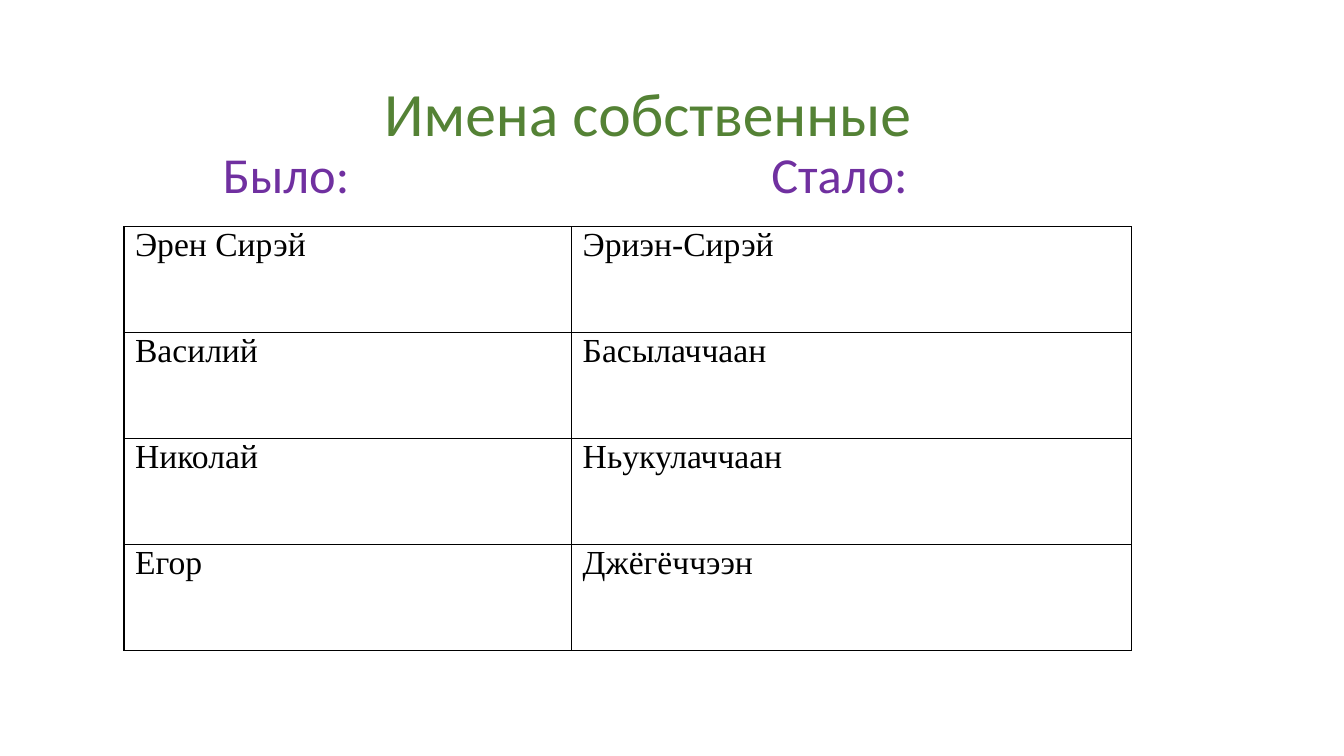
"""Builds a slide with a table of proper names before and after adaptation."""
from lxml.etree import SubElement
from pptx import Presentation
from pptx.dml.color import RGBColor
from pptx.enum.text import MSO_ANCHOR, MSO_AUTO_SIZE, PP_ALIGN
from pptx.oxml.ns import qn
from pptx.util import Inches, Pt

COLORS = {"heading": "548235", "label": "7030A0", "ink": "000000"}
TITLE_LINES = [
    {"text": "\tИмена собственные", "tabs": [2.62], "size": 44, "color": "heading"},
    {"text": "\tБыло:\tСтало:", "tabs": [1.02, 6.46], "size": 36, "color": "label"},
]
NAMES = [
    ("Эрен Сирэй", "Эриэн-Сирэй"),
    ("Василий", "Басылаччаан"),
    ("Николай", "Ньукулаччаан"),
    ("Егор", "Джёгёччээн"),
]
COL_WIDTHS = [4.44, 5.55]
ROW_HEIGHT = 1.05
CELL_FORMAT = {"margin_left": Inches(0.07), "margin_right": Inches(0.07),
               "margin_top": 0, "margin_bottom": 0}
TITLE_FORMAT = {"left": Inches(1.09), "top": Inches(0.7),
                "width": Inches(11.5), "height": Inches(1.45)}
FRAME_FORMAT = {"word_wrap": True, "auto_size": MSO_AUTO_SIZE.NONE,
                "vertical_anchor": MSO_ANCHOR.MIDDLE}


def set_attrs(obj, values):
    for name, value in values.items():
        setattr(obj, name, value)


def add_text(p, text, font, size, color):
    r = p.add_run()
    r.text = text
    set_attrs(r.font, {"name": font, "size": Pt(size)})
    r.font.color.rgb = RGBColor.from_string(COLORS[color])


def add_tabs(p, stops):
    tabs = SubElement(p._p.get_or_add_pPr(), qn("a:tabLst"))
    for stop in stops:
        SubElement(tabs, qn("a:tab"), pos=str(Inches(stop)), algn="l")


def add_borders(cell):
    tcPr = cell._tc.get_or_add_tcPr()
    for side in ("lnL", "lnR", "lnT", "lnB"):
        ln = SubElement(tcPr, qn(f"a:{side}"), w=str(Pt(1)))
        fill = SubElement(ln, qn("a:solidFill"))
        SubElement(fill, qn("a:srgbClr"), val=COLORS["ink"])


def build_title(s):
    title = s.shapes.title
    set_attrs(title, TITLE_FORMAT)
    tf = title.text_frame
    set_attrs(tf, FRAME_FORMAT)
    for i, line in enumerate(TITLE_LINES):
        p = tf.add_paragraph() if i else tf.paragraphs[0]
        add_tabs(p, line["tabs"])
        set_attrs(p, {"alignment": PP_ALIGN.LEFT, "line_spacing": 0.9})
        add_text(p, line["text"], "Calibri", line["size"], line["color"])


def build_table(s):
    table = s.shapes.add_table(
        len(NAMES), len(COL_WIDTHS), Inches(1.23), Inches(2.25),
        Inches(sum(COL_WIDTHS)), Inches(ROW_HEIGHT * len(NAMES))).table
    set_attrs(table, {"first_row": False, "horz_banding": False})
    for col, width in zip(table.columns, COL_WIDTHS):
        col.width = Inches(width)
    for row, names in zip(table.rows, NAMES):
        row.height = Inches(ROW_HEIGHT)
        for cell, name in zip(row.cells, names):
            set_attrs(cell, CELL_FORMAT)
            add_borders(cell)
            cell.fill.background()
            p = cell.text_frame.paragraphs[0]
            p.alignment = PP_ALIGN.JUSTIFY
            p._p.get_or_add_pPr().set("marL", str(Inches(0.04)))
            add_text(p, name, "Times New Roman", 24, "ink")


def main():
    prs = Presentation()
    set_attrs(prs, {"slide_width": Inches(13.33), "slide_height": Inches(7.5)})
    s = prs.slides.add_slide(prs.slide_layouts[5])
    build_title(s)
    build_table(s)
    prs.save("out.pptx")


if __name__ == "__main__":
    main()
